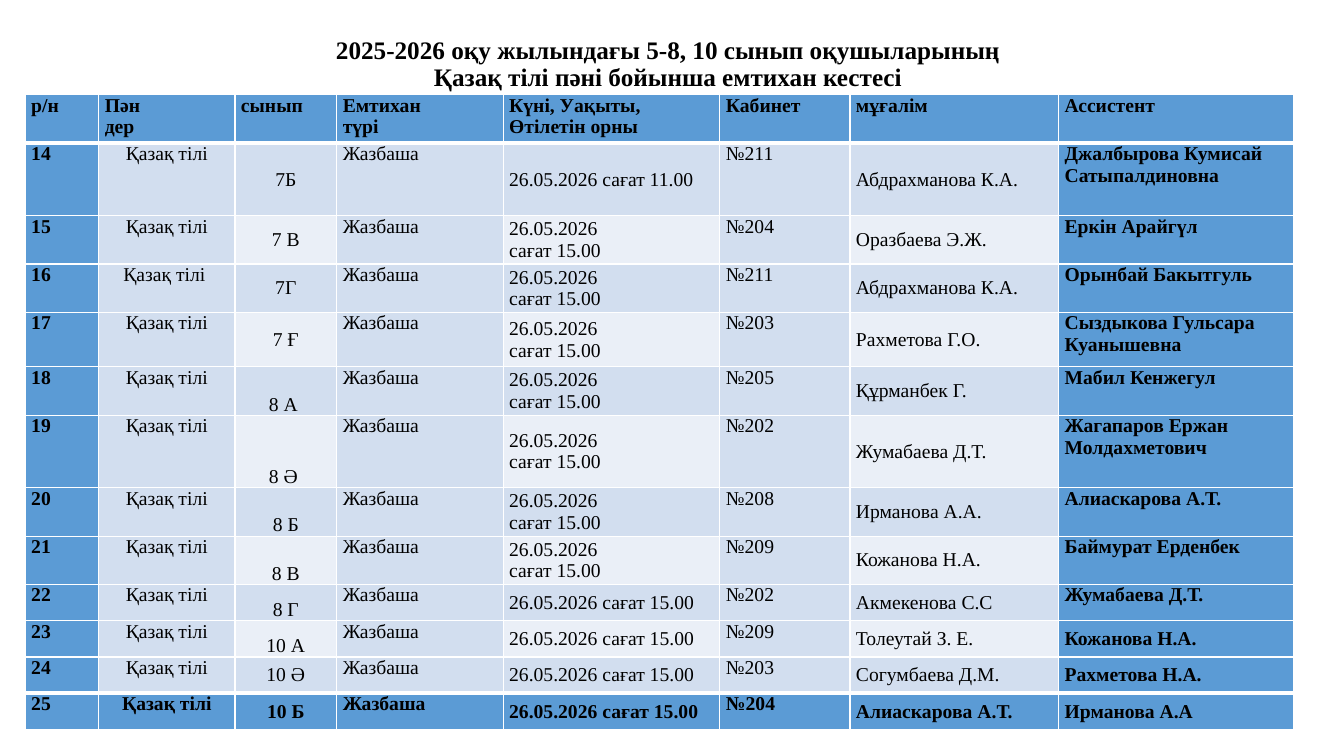
from dataclasses import dataclass
from lxml import etree
from pptx import Presentation
from pptx.dml.color import RGBColor
from pptx.enum.text import MSO_ANCHOR, PP_ALIGN
from pptx.oxml.ns import qn
from pptx.util import Inches, Pt

TOP, MIDDLE, BOTTOM = MSO_ANCHOR.TOP, MSO_ANCHOR.MIDDLE, MSO_ANCHOR.BOTTOM
LEFT, CENTER = PP_ALIGN.LEFT, PP_ALIGN.CENTER


@dataclass(frozen=True)
class Theme:
    font: str = "Times New Roman"
    ink: str = "000000"
    line: str = "FFFFFF"
    strong: str = "5B9BD5"
    band: str = "D2DEEF"
    pale: str = "EAEFF7"
    title: int = 18
    body: int = 14
    thin: int = 1
    thick: int = 3


TITLE = ("2025-2026 оқу жылындағы 5-8, 10 сынып оқушыларының\v"
         "Қазақ тілі пәні бойынша емтихан кестесі")
HEADS = ["р/н", "Пән\nдер", "сынып", "Емтихан\nтүрі",
         "Күні, Уақыты, Өтілетін орны", "Кабинет", "мұғалім", "Ассистент"]
WIDTHS = [0.73, 1.35, 1.01, 1.65, 2.15, 1.29, 2.07, 2.33]
HEIGHTS = [0.48, 0.72, 0.48, 0.48, 0.54, 0.48, 0.72, 0.48, 0.48] + [0.36] * 4
FIRST = 14
EXAMS = [
    ("7Б", "№211", "Абдрахманова К.А.", "Джалбырова Кумисай Сатыпалдиновна"),
    ("7 В", "№204", "Оразбаева Э.Ж.", "Еркін Арайгүл"),
    ("7Г", "№211", "Абдрахманова К.А.", "Орынбай Бакытгуль"),
    ("7 Ғ", "№203", "Рахметова Г.О.", "Сыздыкова Гульсара Куанышевна"),
    ("8 А ", "№205", "Құрманбек Г.", "Мабил Кенжегул"),
    ("8 Ә ", "№202", "Жумабаева Д.Т.", "Жагапаров Ержан Молдахметович"),
    ("8 Б", "№208", "Ирманова А.А.", "Алиаскарова А.Т."),
    ("8 В", "№209", "Кожанова Н.А.", "Баймурат Ерденбек"),
    ("8 Г", "№202", "Акмекенова С.С", "Жумабаева Д.Т."),
    ("10 А", "№209", "Толеутай З. Е.", "Кожанова Н.А."),
    ("10 Ә", "№203", "Согумбаева Д.М.", "Рахметова Н.А."),
    ("10 Б", "№204", "Алиаскарова А.Т.", "Ирманова А.А"),
]


def exam_row(num, exam):
    group, room, tutor, helper = exam
    hour = "11.00" if num == 14 else "15.00"
    gap = "\n" if 15 <= num <= 21 else " "
    subject = "Қазақ тілі " if num == 16 else "Қазақ тілі"
    return [str(num), subject, group, "Жазбаша",
            f"26.05.2026{gap}сағат {hour}", room, tutor, helper]


def cell_look(theme, row, col, last):
    num = FIRST + row - 1
    edge = row in (0, last)
    strong = edge or col in (0, 7)
    pale = col in (2, 4, 6) and row % 2 == 0
    anchor = TOP
    if row and (col in (2, 4, 6) or col == 7 and num >= 23):
        anchor = BOTTOM if col == 2 and 18 <= num <= 23 else MIDDLE
    return {
        "fill": theme.strong if strong else theme.pale if pale else theme.band,
        "bold": strong,
        "anchor": anchor,
        "align": CENTER if row and col in (1, 2) else LEFT,
        "lines": {
            "L": theme.thin,
            "R": theme.thin,
            "T": theme.thick if row in (1, last) else theme.thin,
            "B": theme.thick if row in (0, last - 1) else theme.thin,
        },
    }


class Deck:
    def __init__(self, theme):
        self.theme = theme
        self.file = Presentation()
        self.file.slide_width = Inches(13.33)
        self.file.slide_height = Inches(7.5)
        self.slide = self.file.slides.add_slide(self.file.slide_layouts[6])

    def apply(self, item, values):
        for name, value in values.items():
            setattr(item, name, value)

    def style(self, frame, size, bold, align, space=1.0):
        for para in frame.paragraphs:
            self.apply(para, {"alignment": align, "line_spacing": space})
            for run in para.runs:
                self.apply(run.font, {"name": self.theme.font, "size": Pt(size), "bold": bold})
                run.font.color.rgb = RGBColor.from_string(self.theme.ink)

    def text(self, words, left, top, width, height):
        box = self.slide.shapes.add_textbox(
            Inches(left), Inches(top), Inches(width), Inches(height))
        frame = box.text_frame
        self.apply(frame, {"word_wrap": True, "vertical_anchor": MIDDLE, "text": words})
        self.style(frame, self.theme.title, True, CENTER, 0.9)

    def border(self, cell, lines):
        props = cell._tc.get_or_add_tcPr()
        for side, width in lines.items():
            line = etree.SubElement(props, qn(f"a:ln{side}"), w=str(Pt(width)))
            fill = etree.SubElement(line, qn("a:solidFill"))
            etree.SubElement(fill, qn("a:srgbClr"), val=self.theme.line)

    def cell(self, cell, words, look):
        self.apply(cell, {
            "text": words, "vertical_anchor": look["anchor"],
            "margin_left": Inches(0.06), "margin_right": Inches(0.06),
            "margin_top": 0, "margin_bottom": 0,
        })
        self.border(cell, look["lines"])
        cell.fill.solid()
        cell.fill.fore_color.rgb = RGBColor.from_string(look["fill"])
        self.style(cell.text_frame, self.theme.body, look["bold"], look["align"])

    def table(self, rows, left, top):
        grid = self.slide.shapes.add_table(
            len(rows), len(WIDTHS), Inches(left), Inches(top),
            Inches(sum(WIDTHS)), Inches(sum(HEIGHTS))).table
        self.apply(grid, {"first_row": False, "horz_banding": False})
        for col, width in zip(grid.columns, WIDTHS):
            col.width = Inches(width)
        for row, height in zip(grid.rows, HEIGHTS):
            row.height = Inches(height)
        for r, row in enumerate(rows):
            for c, words in enumerate(row):
                look = cell_look(self.theme, r, c, len(rows) - 1)
                self.cell(grid.cell(r, c), words, look)


def main():
    deck = Deck(Theme())
    deck.text(TITLE, 0.83, 0.1, 11.59, 1.09)
    rows = [HEADS] + [exam_row(num, exam) for num, exam in enumerate(EXAMS, FIRST)]
    deck.table(rows, 0.25, 0.94)
    deck.file.save("out.pptx")


if __name__ == "__main__":
    main()
